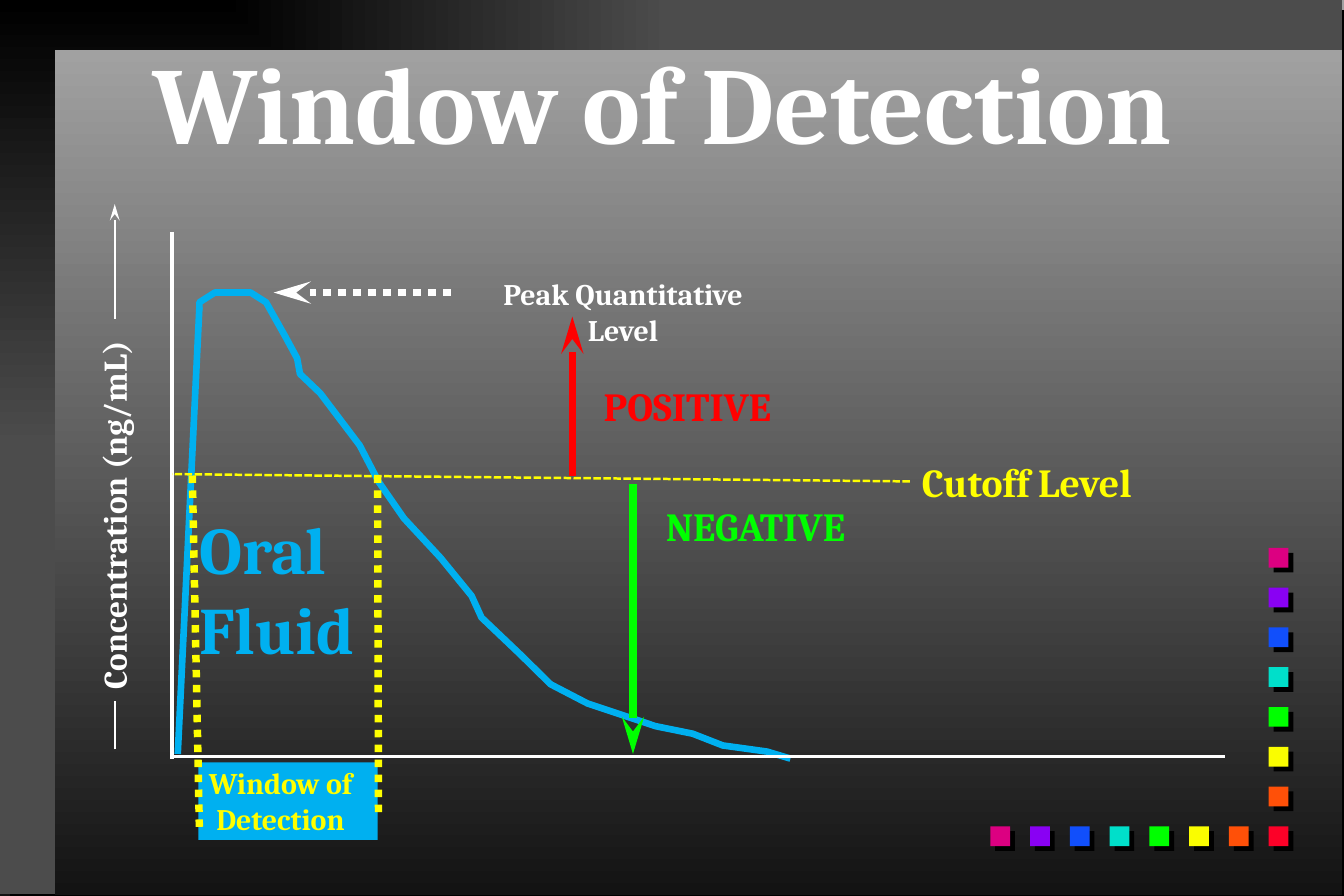
from itertools import chain
from lxml.etree import SubElement
from pptx import Presentation
from pptx.dml.color import RGBColor
from pptx.enum.dml import MSO_LINE as Dash
from pptx.enum.shapes import MSO_CONNECTOR as Link, MSO_SHAPE as Kind
from pptx.enum.text import MSO_ANCHOR as Anchor, MSO_AUTO_SIZE as Fit, PP_ALIGN as Align
from pptx.oxml import parse_xml
from pptx.oxml.ns import nsdecls, qn
from pptx.util import Cm, Pt

BLACK = RGBColor(0x00, 0x00, 0x00)
GREY = RGBColor(0x4C, 0x4C, 0x4C)
LIGHT = RGBColor(0xA1, 0xA1, 0xA1)
DARK = RGBColor(0x13, 0x13, 0x13)
WHITE = RGBColor(0xFF, 0xFF, 0xFF)
BLUE = RGBColor(0x00, 0xB0, 0xF0)
YELLOW = RGBColor(0xFF, 0xFF, 0x00)
GREEN = RGBColor(0x00, 0xFF, 0x00)
RED = RGBColor(0xFF, 0x00, 0x00)
BEADS = [
    RGBColor(0xFC, 0x01, 0x28), RGBColor(0xFF, 0x50, 0x08),
    RGBColor(0xFA, 0xFD, 0x00), RGBColor(0x00, 0xFF, 0x00),
    RGBColor(0x00, 0xDF, 0xCA), RGBColor(0x11, 0x4F, 0xFB),
    RGBColor(0x89, 0x01, 0xF3), RGBColor(0xDC, 0x00, 0x81),
]

AXIS, BASE = 3.66, 16.08
PEAK, CUTOFF = 6.22, 10.11
OPEN, CLOSE = 4.22, 8.03
SCALE = 2.44
STAGES = {
    "peak": [(4.24, 6.58), (4.24, 6.43), (4.57, PEAK), (5.33, PEAK), (5.66, 6.43)],
    "drop": [(6.07, 7.16), (6.32, 7.62), (6.38, 7.95), (6.81, 8.36), (7.65, 9.47), (8.05, 10.24)],
    "fade": [(8.59, 11.02), (9.37, 11.86), (10.03, 12.67), (10.24, 13.13), (11.07, 13.92), (11.71, 14.55)],
    "tail": [(12.5, 14.96), (13.94, 15.44), (14.73, 15.6), (15.37, 15.85), (16.31, 15.98), (16.81, 16.13)],
}


def blend(fill, first, last):
    """Fill with a gradient that runs from top to bottom."""
    fill.gradient()
    fill.gradient_angle = 270
    for stop, color in zip(fill.gradient_stops, (first, last)):
        stop.color.rgb = color


def add_box(slide, box, color=None, drop=0):
    """Add a rectangle without outline, with a drop shadow of some points."""
    shape = slide.shapes.add_shape(Kind.RECTANGLE, *map(Cm, box))
    if color is not None:
        shape.fill.solid()
        shape.fill.fore_color.rgb = color
    shape.line.fill.background()
    shape.shadow.inherit = False
    if drop:
        effects = shape.element.spPr.find(qn("a:effectLst"))
        shade = SubElement(effects, qn("a:outerShdw"), dist=str(Pt(drop)), dir="2700000", algn="ctr", rotWithShape="0")
        SubElement(shade, qn("a:srgbClr"), val=str(BLACK))
    return shape


def add_line(slide, ends, color, width, dash=None, arrow=False):
    """Add a straight line, dashed or with a long arrowhead at its end."""
    link = slide.shapes.add_connector(Link.STRAIGHT, *map(Cm, ends))
    link.line.color.rgb = color
    link.line.width = Pt(width)
    if dash:
        link.line.dash_style = dash
    if arrow:
        stroke = link.element.spPr.find(qn("a:ln"))
        SubElement(stroke, qn("a:tailEnd"), type="stealth", len="lg")
    SubElement(link.element.spPr, qn("a:effectLst"))
    return link


def add_text(slide, box, text, size, color, align=Align.CENTER, wrap=False, fit=Fit.SHAPE_TO_FIT_TEXT):
    """Add a text box with bold text, one paragraph a line."""
    label = slide.shapes.add_textbox(*map(Cm, box))
    frame = label.text_frame
    frame.text = text
    frame.word_wrap = wrap
    frame.auto_size = fit
    for para in frame.paragraphs:
        para.alignment = align
        for run in para.runs:
            font = run.font
            font.name, font.size, font.bold = "Cambria", Pt(size), True
            font.color.rgb = color
    return label


def add_frame(slide):
    """Add the dark corner frame and the panel on it."""
    frame = add_box(slide, (0, 0, 28.55, 19.02), drop=8.5)
    blend(frame.fill, BLACK, GREY)
    ramp = frame.element.spPr.find(qn("a:gradFill"))
    ramp.replace(ramp.find(qn("a:lin")), parse_xml(
        f'<a:path {nsdecls("a")} path="rect"><a:fillToRect r="100000" b="100000"/></a:path>'))
    panel = add_box(slide, (1.17, 1.07, 27.38, 17.96), drop=8.5)
    blend(panel.fill, LIGHT, DARK)


def add_beads(slide):
    """Add the row and the column of squares that meet in the corner."""
    left, top, side, reach = 26.98, 17.57, 0.42, 5.92
    step = reach / (len(BEADS) - 1)
    for i, color in enumerate(BEADS):
        add_box(slide, (left - i * step, top, side, side), color, 4.2)
    for i, color in enumerate(BEADS[1:], 1):
        add_box(slide, (left, top - i * step, side, side), color, 4.2)


def add_curve(slide):
    """Add the steep rise and then the stages of the concentration curve."""
    start, *rest = [(Cm(x), Cm(y)) for x, y in chain.from_iterable(STAGES.values())]
    pen = slide.shapes.build_freeform(*start)
    pen.add_line_segments(rest, close=False)
    shape = pen.convert_to_shape()
    shape.fill.background()
    shape.line.color.rgb = BLUE
    shape.line.width = Pt(4)
    shape.shadow.inherit = False
    add_line(slide, (3.78, 16.03, 4.24, 6.53), BLUE, 4)


def add_axes(slide):
    """Add both axes and the upright name of the scale between its lines."""
    for ends in ((AXIS, 4.93, AXIS, BASE + 0.05), (AXIS, BASE, 26.04, BASE)):
        add_line(slide, ends, WHITE, 2)
    name = add_text(slide, (-1.52, 10.39, 7.9, 1.12), "Concentration (ng/mL)", 20, WHITE, Align.LEFT)
    name.rotation = 270
    for start, end, arrow in ((15.93, 14.91, False), (6.78, 4.34, True)):
        add_line(slide, (SCALE, start, SCALE, end), WHITE, 1, arrow=arrow)


def add_window(slide):
    """Add the dotted bounds of the detection window and its labels."""
    add_text(slide, (3.99, 10.69, 3.99, 3.68), "Oral\nFluid", 40, BLUE, Align.LEFT)
    for ends in ((CLOSE, CUTOFF, CLOSE + 0.02, 17.35), (OPEN - 0.13, CUTOFF, OPEN + 0.02, 17.58)):
        add_line(slide, ends, YELLOW, 4.5, Dash.ROUND_DOT)
    add_text(slide, (4.19, 16.13, 3.55, 1.8), "Window of\nDetection", 18, YELLOW)


def add_levels(slide):
    """Add the results on both sides of the cutoff, the cutoff and the peak."""
    results = (
        ("NEGATIVE", GREEN, (13.46, 10.54, 5.21, 1.27), (13.46, 10.29, 13.46, 16.03)),
        ("POSITIVE", RED, (12.27, 7.98, 4.7, 1.27), (12.17, CUTOFF, 12.17, 6.73)),
    )
    for text, color, box, ends in results:
        add_text(slide, box, text, 24, color, wrap=True)
        add_line(slide, ends, color, 4.5, arrow=True)

    limit = add_line(slide, (19.35, 10.29, AXIS, 10.08), YELLOW, 1.5, Dash.SQUARE_DOT)
    label = add_text(slide, (19.35, 9.6, 4.97, 1.27), "Cutoff Level", 24, YELLOW)
    limit.begin_connect(label, 1)

    add_text(slide, (9.65, 5.74, 7.2, 1.02), "Peak Quantitative Level", 18, WHITE)
    add_line(slide, (9.58, PEAK, 5.82, PEAK), WHITE, 4.5, Dash.ROUND_DOT, True)


def add_title(slide):
    """Add the title at the top of the panel."""
    title = add_text(slide, (1.17, 0.79, 25.83, 2.92), "Window of Detection", 66, WHITE, wrap=True, fit=Fit.NONE)
    title.text_frame.vertical_anchor = Anchor.BOTTOM
    title.text_frame.paragraphs[0].line_spacing = 0.9


def main():
    """Build the slide and save it."""
    deck = Presentation()
    deck.slide_width, deck.slide_height = Cm(28.58), Cm(19.05)
    slide = deck.slides.add_slide(deck.slide_layouts[6])
    blend(slide.background.fill, LIGHT, DARK)
    add_frame(slide)
    add_beads(slide)
    add_box(slide, (OPEN, 16.21, CLOSE - OPEN, 1.65), BLUE)
    for add_part in (add_curve, add_axes, add_window, add_levels, add_title):
        add_part(slide)
    deck.save("out.pptx")


if __name__ == "__main__":
    main()
